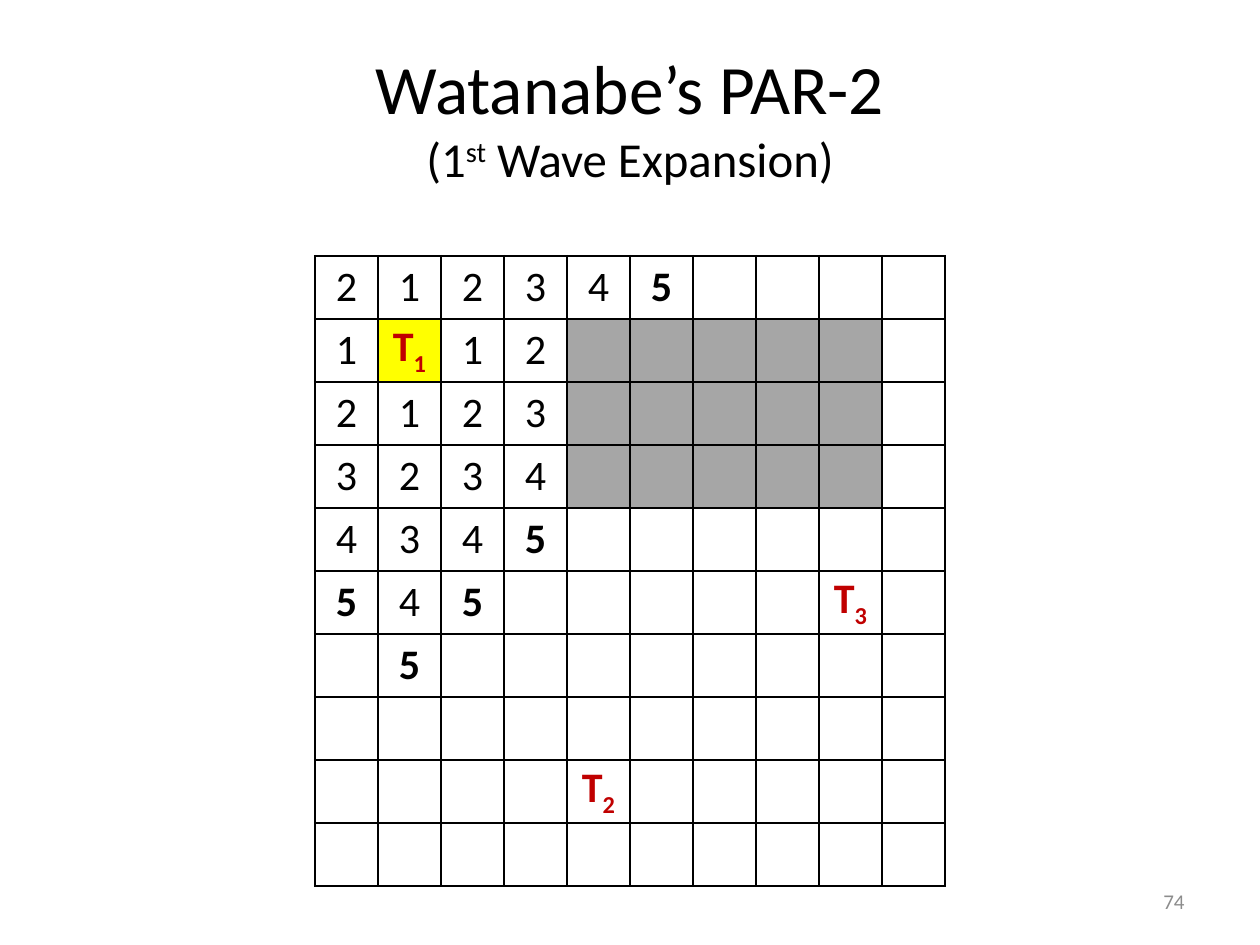
import pptx
import pptx.util
import pptx.dml.color
import pptx.enum.text
import pptx.oxml
import pptx.oxml.ns

ANCHOR = pptx.enum.text.MSO_ANCHOR
ALIGN = pptx.enum.text.PP_ALIGN

# Content: one row of the grid per line; "." is an empty cell, "#" an obstacle
GRID = [
    "2 1 2 3 4 5 . . . .",
    "1 T1 1 2 # # # # # .",
    "2 1 2 3 # # # # # .",
    "3 2 3 4 # # # # # .",
    "4 3 4 5 . . . . . .",
    "5 4 5 . . . . . T3 .",
    ". 5 . . . . . . . .",
    ". . . . . . . . . .",
    ". . . . T2 . . . . .",
    ". . . . . . . . . .",
]
WAVE_FRONT = "5"
SOURCE = "T1"
TITLE = "Watanabe’s PAR-2"
SUBTITLE = [("(1", 0), ("st", 30), (" Wave Expansion)", 0)]
PAGE = "74"

# Layout in px, 126 to the inch
TITLE_BOX = (63, 38, 1134, 157)
PAGE_BOX = (903, 876, 294, 50)
GRID_LEFT, GRID_TOP, CELL = 315, 256, 63

FONT = "Calibri"
BLACK, WHITE, RED = "000000", "FFFFFF", "C00000"
YELLOW, GREY, PAGE_GREY = "FFFF00", "A6A6A6", "8C8C8C"


def px(n):
    return round(n * 914400 / 126)


def rgb(color):
    return pptx.dml.color.RGBColor.from_string(color)


def add_run(p, text, size, color=BLACK, bold=False, baseline=0):
    r = p.add_run()
    r.text = text
    fmt = {"name": FONT, "size": pptx.util.Pt(size), "bold": bold}
    for key, value in fmt.items():
        setattr(r.font, key, value)
    r.font.color.rgb = rgb(color)
    if baseline:
        r.font._element.set("baseline", str(baseline * 1000))


def add_borders(cell):
    tc_pr = cell._tc.get_or_add_tcPr()
    for side in "LRTB":
        tc_pr.append(pptx.oxml.parse_xml(
            f'<a:ln{side} {pptx.oxml.ns.nsdecls("a")} w="{pptx.util.Pt(1.5)}">'
            f'<a:solidFill><a:srgbClr val="{BLACK}"/></a:solidFill></a:ln{side}>'))


def fill_cell(cell, mark):
    add_borders(cell)
    cell.fill.solid()
    cell.fill.fore_color.rgb = rgb({"#": GREY, SOURCE: YELLOW}.get(mark, WHITE))
    fmt = {"vertical_anchor": ANCHOR.MIDDLE, "margin_left": 0, "margin_right": 0,
           "margin_top": 0, "margin_bottom": 0}
    for key, value in fmt.items():
        setattr(cell, key, value)
    if mark in ".#":
        return
    p = cell.text_frame.paragraphs[0]
    p.alignment = ALIGN.CENTER
    if mark.startswith("T"):
        add_run(p, mark[0], 24, RED, True)
        add_run(p, mark[1:], 24, RED, True, -25)
    else:
        add_run(p, mark, 24, bold=mark == WAVE_FRONT)


prs = pptx.Presentation()
prs.slide_width, prs.slide_height = px(1260), px(945)
s = prs.slides.add_slide(prs.slide_layouts[5])

# Title
sp = s.shapes.title
sp.left, sp.top, sp.width, sp.height = map(px, TITLE_BOX)
tf = sp.text_frame
tf.auto_size = pptx.enum.text.MSO_AUTO_SIZE.NONE
tf.vertical_anchor = ANCHOR.MIDDLE
p = tf.paragraphs[0]
p.alignment = ALIGN.CENTER
add_run(p, TITLE, 39.6)
p.add_line_break()
for text, baseline in SUBTITLE:
    add_run(p, text, 27.9, baseline=baseline)

# Routing grid
rows = [line.split() for line in GRID]
n_rows, n_cols = len(rows), len(rows[0])
table = s.shapes.add_table(n_rows, n_cols, px(GRID_LEFT), px(GRID_TOP),
                           px(n_cols * CELL), px(n_rows * CELL)).table
table.first_row = table.horz_banding = False
for col in table.columns:
    col.width = px(CELL)
for i, row in enumerate(rows):
    table.rows[i].height = px(CELL)
    for j, mark in enumerate(row):
        fill_cell(table.cell(i, j), mark)

# Page number
tf = s.shapes.add_textbox(*map(px, PAGE_BOX)).text_frame
tf.word_wrap = True
tf.vertical_anchor = ANCHOR.MIDDLE
p = tf.paragraphs[0]
p.alignment = ALIGN.RIGHT
add_run(p, PAGE, 12, PAGE_GREY)

prs.save("out.pptx")
